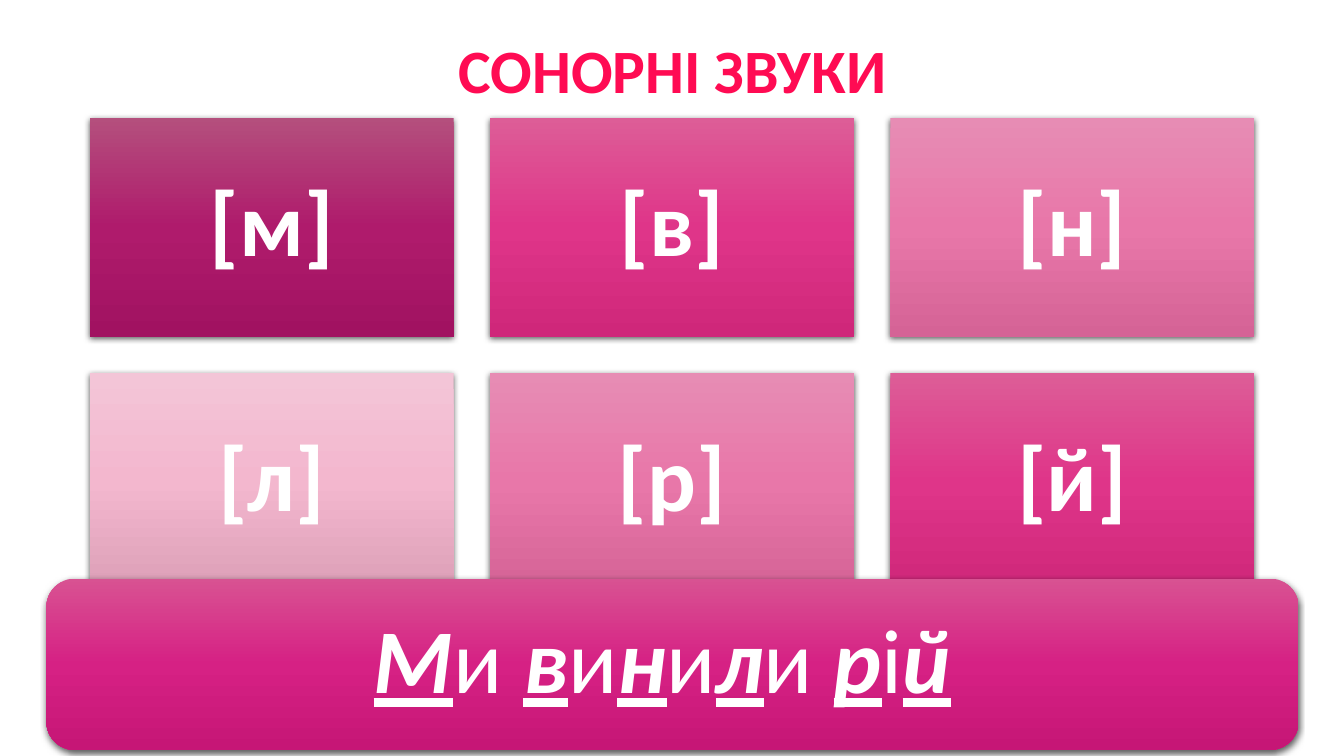
from copy import deepcopy

from lxml.etree import SubElement
from pptx import Presentation
from pptx.dml.color import RGBColor
from pptx.enum.shapes import MSO_SHAPE
from pptx.enum.text import MSO_ANCHOR, PP_ALIGN
from pptx.oxml.ns import qn
from pptx.util import Inches, Pt

TITLE = "СОНОРНІ ЗВУКИ"
SOUNDS = [
    [("[м]", "plum"), ("[в]", "magenta"), ("[н]", "pink")],
    [("[л]", "pale"), ("[р]", "pink"), ("[й]", "magenta")],
]
# (text, is a sonorant)
MNEMONIC = [
    ("М", True), ("и ", False), ("в", True), ("и", False), ("н", True), ("и", False),
    ("л", True), ("и ", False), ("р", True), ("і", False), ("й", True), (" ", False),
]

THEME = {
    "font": "Calibri",
    "title_size": Pt(44),
    "sound_size": Pt(65),
    "title": "FF0B53",
    "text": "FFFFFF",
    "shadow": "000000",
    "gradients": {
        "plum": ("B44F7D", "AF1B6C", "A11261"),
        "magenta": ("DD5D97", "DF3589", "CF277A"),
        "pink": ("E78CB4", "E877A9", "D56396"),
        "pale": ("F3C5D7", "F3B7CE", "DC9FB7"),
        "banner": ("D85292", "D62184", "C61676"),
    },
}

GRID_LEFT, GRID_TOP = 0.89, 1.17
TILE_W, TILE_H = 3.61, 2.17
GAP = 0.36
INSET = Inches(0.27)


def fill_gradient(sp, colors):
    """Fill from top to bottom with evenly spaced colours."""
    sp.fill.gradient()
    sp.fill.gradient_angle = 270
    stops = sp._element.spPr.find(qn("a:gradFill")).find(qn("a:gsLst"))
    while len(stops) < len(colors):
        stops.append(deepcopy(stops[0]))
    for i, (stop, color) in enumerate(zip(sp.fill.gradient_stops, colors)):
        stop.position = i / (len(colors) - 1)
        stop.color.rgb = RGBColor.from_string(color)


def add_shadow(sp):
    sp.shadow.inherit = False
    effects = sp._element.spPr.find(qn("a:effectLst"))
    shadow = SubElement(effects, qn("a:outerShdw"), blurRad=str(Pt(4.5)),
                        dist=str(Pt(1.5)), dir="5400000", algn="ctr", rotWithShape="0")
    color = SubElement(shadow, qn("a:srgbClr"), val=THEME["shadow"])
    SubElement(color, qn("a:alpha"), val="63000")


def write_line(sp, runs, size, color):
    """Write one centred line of (text, run formats) pairs."""
    tf = sp.text_frame
    tf.word_wrap = True
    tf.vertical_anchor = MSO_ANCHOR.MIDDLE
    p = tf.paragraphs[0]
    p.alignment = PP_ALIGN.CENTER
    p.line_spacing = 0.9
    p.font.name = THEME["font"]
    p.font.size = size
    p.font.color.rgb = RGBColor.from_string(color)
    for text, formats in runs:
        r = p.add_run()
        r.text = text
        for name, value in formats.items():
            setattr(r.font, name, value)


def add_panel(s, kind, box, gradient, runs):
    sp = s.shapes.add_shape(kind, *map(Inches, box))
    fill_gradient(sp, THEME["gradients"][gradient])
    sp.line.fill.background()
    add_shadow(sp)
    tf = sp.text_frame
    tf.margin_left = tf.margin_right = tf.margin_top = tf.margin_bottom = INSET
    write_line(sp, runs, THEME["sound_size"], THEME["text"])


def main():
    prs = Presentation()
    prs.slide_width, prs.slide_height = Inches(13.33), Inches(7.5)
    s = prs.slides.add_slide(prs.slide_layouts[6])

    title = s.shapes.add_textbox(Inches(0.92), 0, Inches(11.5), Inches(1.45))
    write_line(title, [(TITLE, {"bold": True})], THEME["title_size"], THEME["title"])

    for row, sounds in enumerate(SOUNDS):
        for col, (sound, gradient) in enumerate(sounds):
            box = (GRID_LEFT + col * (TILE_W + GAP), GRID_TOP + row * (TILE_H + GAP),
                   TILE_W, TILE_H)
            add_panel(s, MSO_SHAPE.RECTANGLE, box, gradient, [(sound, {"bold": True})])

    sonorant = {"bold": True, "italic": True, "underline": True}
    runs = [(text, sonorant if stressed else {}) for text, stressed in MNEMONIC]
    add_panel(s, MSO_SHAPE.ROUNDED_RECTANGLE, (0.46, 5.74, 12.42, 1.7), "banner", runs)

    prs.save("out.pptx")


if __name__ == "__main__":
    main()
